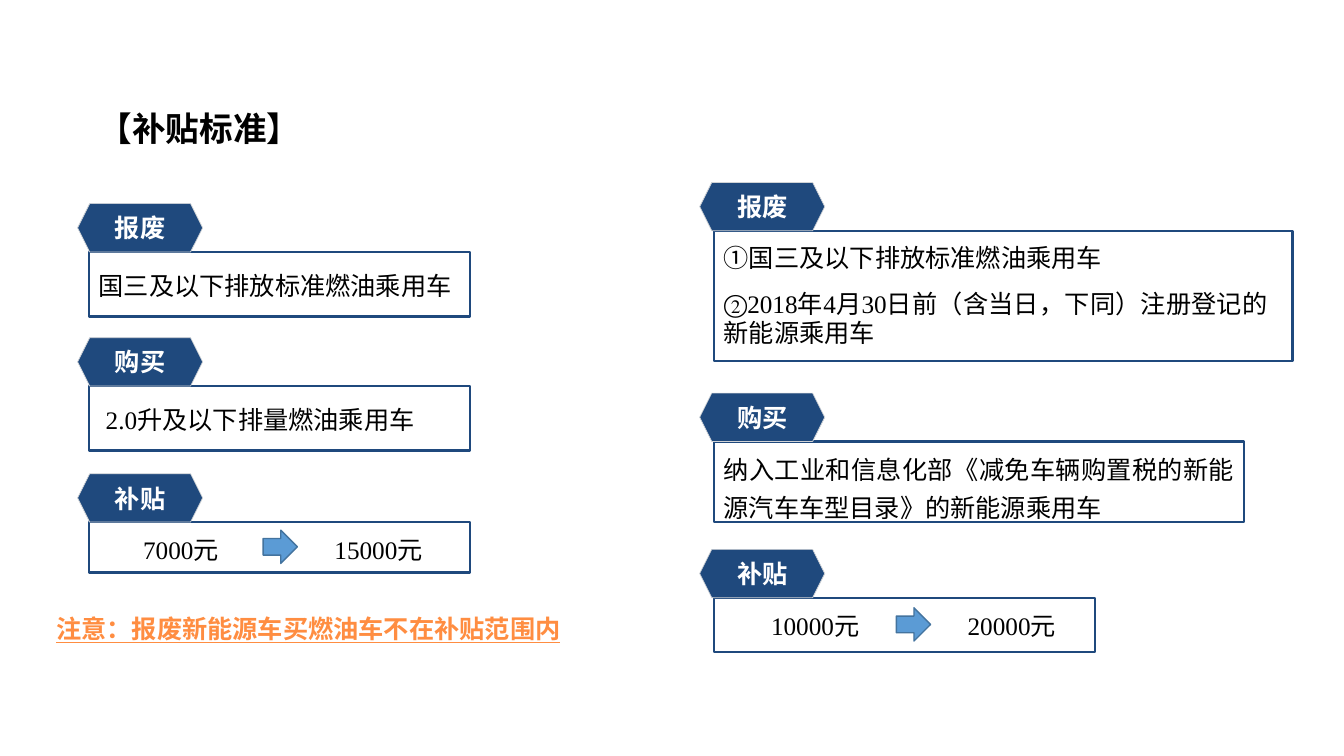
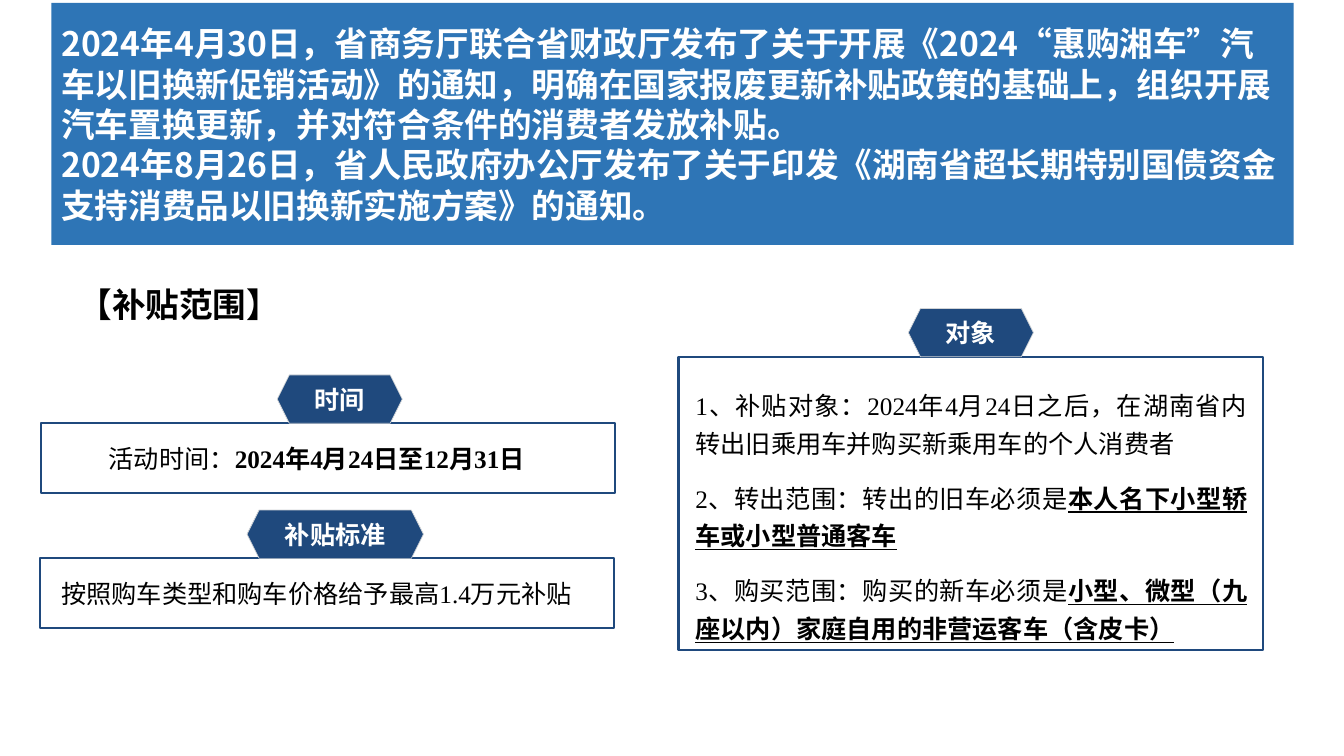
"""Build two slides on car trade-in subsidies."""
from pptx import Presentation
from pptx.dml.color import RGBColor
from pptx.enum.shapes import MSO_SHAPE
from pptx.enum.text import MSO_ANCHOR, PP_ALIGN
from pptx.util import Emu, Pt
from lxml import etree

PX = 9144
RECT, HEX, ARROW = MSO_SHAPE.RECTANGLE, MSO_SHAPE.HEXAGON, MSO_SHAPE.RIGHT_ARROW
LEFT, MID, JUST = PP_ALIGN.LEFT, PP_ALIGN.CENTER, PP_ALIGN.JUSTIFY
TOP, CENTRE = MSO_ANCHOR.TOP, MSO_ANCHOR.MIDDLE
SERIF, SANS, CJK = "Times New Roman", "Arial", "Noto Sans CJK SC"
COLORS = {
    "navy": "1F497D", "rim": "D0D3D6", "band": "2E75B6", "arrow": "5B9BD5",
    "edge": "43739E", "note": "FF8D41", "ink": "000000", "white": "FFFFFF",
}
NS = "{http://schemas.openxmlformats.org/drawingml/2006/main}"
TIGHT = Pt(28.8)


def rgb(name):
    """Return a palette colour."""
    return RGBColor.from_string(COLORS[name])


def place(box):
    """Turn a px box into EMU lengths."""
    return [Emu(n * PX) for n in box]


def draw(slide, kind, box, fill=None, line=None, width=1.5):
    """Draw a flat preset shape."""
    shape = slide.shapes.add_shape(kind, *place(box))
    shape.shadow.inherit = False
    if fill:
        shape.fill.solid()
        shape.fill.fore_color.rgb = rgb(fill)
    else:
        shape.fill.background()
    if line:
        shape.line.color.rgb = rgb(line)
        shape.line.width = Pt(width)
    else:
        shape.line.fill.background()
    return shape


def ink(para, text, font=SERIF, size=18, color="ink", bold=False, under=False):
    """Add one styled run."""
    run = para.add_run()
    run.text = text
    face = run.font
    face.name, face.size, face.bold, face.underline = font, Pt(size), bold, under
    face.color.rgb = rgb(color)
    east = etree.Element(NS + "ea", typeface=CJK)
    face._element.find(NS + "latin").addnext(east)


def write(shape, paras, align=JUST, lead=None, gap=0, after=0, anchor=TOP):
    """Fill a shape with paragraphs of (text, style) runs."""
    frame = shape.text_frame
    frame.word_wrap = True
    frame.vertical_anchor = anchor
    for i, runs in enumerate(paras):
        para = frame.add_paragraph() if i else frame.paragraphs[0]
        para.alignment = align
        para.space_before, para.space_after = Pt(gap), Pt(after)
        if lead:
            para.line_spacing = lead
        for text, style in runs:
            ink(para, text, **style)
    return frame


def prose(slide, box, paras, align=JUST, lead=Pt(27)):
    """Place body text with even paragraph gaps."""
    area = slide.shapes.add_textbox(*place(box))
    write(area, paras, align, lead, 6, 6)


def head(slide, y, text, dent):
    """Place the section heading."""
    area = slide.shapes.add_textbox(*place((51, y, 1260, 77)))
    style = dict(font=SANS, size=24, bold=True)
    frame = write(area, [[(text, style)]], JUST, TIGHT, 1.3)
    frame.paragraphs[0]._p.get_or_add_pPr().set("marL", str(dent * PX))


def card(slide, box, label, dx, wide=124):
    """Draw an outlined frame with a hexagon tag on its top edge."""
    x, y = box[:2]
    draw(slide, RECT, box, line="navy")
    tag = draw(slide, HEX, (x + dx, y - 48, wide, 48), "navy", "rim", 0.5)
    frame = write(tag, [[(label, dict(color="white", bold=True))]], MID, anchor=CENTRE)
    frame.margin_left = frame.margin_right = 0


def panel(slide, box, label, dx, inner, paras, wide=124, **kind):
    """Draw a card with text in a box relative to the frame."""
    card(slide, box, label, dx, wide)
    left, top, width, height = inner
    prose(slide, (box[0] + left, box[1] + top, width, height), paras, **kind)


def raise_sum(slide, box, dx, old, new, wide, at, drop):
    """Draw a card where an arrow leads from the old sum to the new."""
    x, y = box[:2]
    card(slide, box, "补贴", dx)
    for left, width, text in ((x, wide, old), (x + at + 23, 183, new)):
        prose(slide, (left, y, width, 61), [[(text, {})]], MID)
    draw(slide, ARROW, (x + at, y + drop, 34, 33), "arrow", "edge", 1)


def rates(slide):
    """Build the slide of subsidy rates."""
    head(slide, 102, "【补贴标准】", 37)
    panel(slide, (88, 250, 378, 64), "报废", -11, (0, 6, 378, 64),
          [[("国三及以下排放标准燃油乘用车", {})]])
    panel(slide, (88, 383, 378, 64), "购买", -11, (7, 6, 378, 64),
          [[("2.0升及以下排量燃油乘用车", {})]])
    raise_sum(slide, (88, 518, 378, 50), -11, "7000元", "15000元", 183, 173, 8)
    panel(slide, (708, 229, 574, 129), "报废", -14, (0, 7, 559, 129),
          [[("①国三及以下排放标准燃油乘用车", {})],
           [("②2018年4月30日前（含当日，下同）注册登记的新能源乘用车", {})]],
          lead=Pt(21))
    panel(slide, (708, 438, 526, 80), "购买", -14, (0, 0, 526, 64),
          [[("纳入工业和信息化部《减免车辆购置税的新能源汽车车型目录》的新能源乘用车", {})]])
    raise_sum(slide, (708, 593, 378, 54), -14, "10000元", "20000元", 201, 181, 10)
    note = slide.shapes.add_textbox(*place((46, 604, 648, 40)))
    style = dict(color="note", bold=True, under=True)
    write(note, [[("注意：报废新能源车买燃油车不在补贴范围内", style)]], LEFT)


def banner(slide, box, lines):
    """Draw the title band, one line break between notices."""
    band = draw(slide, RECT, box, "band")
    frame = write(band, [[]], LEFT, TIGHT, 1.3, anchor=CENTRE)
    para = frame.paragraphs[0]
    for i, text in enumerate(lines):
        if i:
            para.add_line_break()
        ink(para, text, CJK, 24, "white", True)


def scope(slide):
    """Build the slide of subsidy scope."""
    banner(slide, (51, 3, 1232, 240), (
        "2024年4月30日，省商务厅联合省财政厅发布了关于开展《2024“惠购湘车”汽车以旧换新促销活动》的通知，"
        "明确在国家报废更新补贴政策的基础上，组织开展汽车置换更新，并对符合条件的消费者发放补贴。",
        "2024年8月26日，省人民政府办公厅发布了关于印发《湖南省超长期特别国债资金支持消费品以旧换新实施方案》的通知。",
    ))
    head(slide, 277, "【补贴范围】", 17)
    panel(slide, (41, 420, 569, 69), "时间", 234, (57, 0, 529, 83),
          [[("活动时间：", {}), ("2024年4月24日至12月31日", dict(bold=True))]],
          align=LEFT, lead=1.5)
    panel(slide, (40, 554, 569, 69), "补贴标准", 205, (11, 0, 549, 83),
          [[("按照购车类型和购车价格给予最高1.4万元补贴", {})]],
          wide=175, align=LEFT, lead=1.5)
    plain = dict(font=SANS)
    key = dict(font=SANS, bold=True, under=True)
    panel(slide, (673, 354, 580, 291), "对象", 228, (7, 21, 567, 283), [
        [("1、补贴对象：2024年4月24日之后，在湖南省内转出旧乘用车并购买新乘用车的个人消费者", {})],
        [("2、转出范围：", {}), ("转出的旧车必须是", plain),
         ("本人名下小型轿车或小型普通客车", key)],
        [("3、购买范围：", {}), ("购买的新车必须是", plain),
         ("小型、微型（九座以内）家庭自用的非营运客车（含皮卡）", key)],
    ])


def main():
    """Build and save the deck."""
    deck = Presentation()
    deck.slide_width, deck.slide_height = Emu(1333 * PX), Emu(750 * PX)
    for build in (rates, scope):
        build(deck.slides.add_slide(deck.slide_layouts[6]))
    deck.save("out.pptx")


if __name__ == "__main__":
    main()
